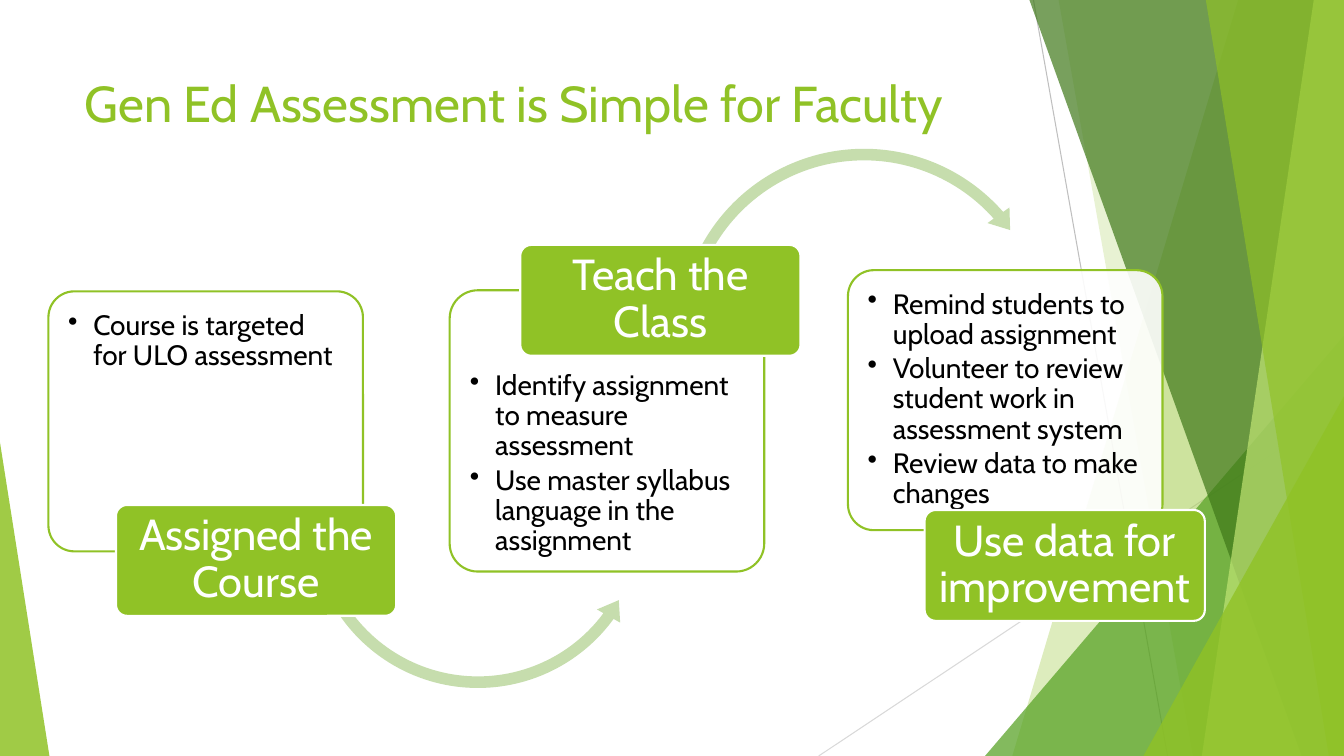
import dataclasses

import pptx
import pptx.dml.color
import pptx.enum.shapes
import pptx.enum.text
import pptx.oxml.ns
import pptx.oxml.xmlchemy
import pptx.util

EMU_PER_PX = 9144  # 100 px to the inch
SLIDE_WIDTH, SLIDE_HEIGHT = 1333, 750
PANEL_WIDTH = 312
LABEL_WIDTH, LABEL_HEIGHT = 278, 110
SHAPES = pptx.enum.shapes.MSO_SHAPE
ALIGN = pptx.enum.text.PP_ALIGN
ANCHOR = pptx.enum.text.MSO_ANCHOR


@dataclasses.dataclass(frozen=True)
class Theme:
    font: str = "Cabin"
    green: str = "90C226"
    mid_green: str = "54A021"
    dark_green: str = "3F7819"
    lime: str = "C0E474"
    arrow: str = "C6DDAD"
    white: str = "FFFFFF"
    black: str = "000000"
    dark_line: str = "BFBFBF"
    light_line: str = "D9D9D9"
    title_size: int = 36
    label_size: int = 31
    body_size: int = 20
    outline: float = 1.5
    hairline: float = 0.75


THEME = Theme()


@dataclasses.dataclass(frozen=True)
class Step:
    panel: tuple  # left, top, height
    label: tuple  # left, top
    heading: str
    points: tuple
    text_top: int = 12


STEPS = (
    Step((48, 289, 258), (115, 501), "Assigned the Course",
         ("Course is targeted for ULO assessment",)),
    Step((446, 288, 279), (516, 243), "Teach the Class",
         ("Identify assignment to measure assessment",
          "Use master syllabus language in the assignment"), text_top=72),
    Step((841, 268, 258), (917, 506), "Use data for improvement",
         ("Remind students to upload assignment",
          "Volunteer to review student work in assessment system",
          "Review data to make changes")),
)


def px(length):
    return pptx.util.Emu(length * EMU_PER_PX)


def rgb(color):
    return pptx.dml.color.RGBColor.from_string(color)


def new_element(tag):
    return pptx.oxml.xmlchemy.OxmlElement(tag)


def style_shape(shape, fill, opacity=100, line=None):
    shape.shadow.inherit = False
    shape.fill.solid()
    shape.fill.fore_color.rgb = rgb(fill)
    if opacity < 100:
        color = shape._element.spPr.find(".//" + pptx.oxml.ns.qn("a:srgbClr"))
        alpha = new_element("a:alpha")
        alpha.set("val", str(opacity * 1000))
        color.append(alpha)
    if line:
        shape.line.color.rgb = rgb(line)
        shape.line.width = pptx.util.Pt(THEME.outline)
    else:
        shape.line.fill.background()


def add_preset(slide, kind, bounds, adjustments, fill, **style):
    shape = slide.shapes.add_shape(kind, *map(px, bounds))
    for index, value in enumerate(adjustments):
        shape.adjustments[index] = value
    style_shape(shape, fill, **style)
    return shape


def add_facet(slide, top_x, bottom_x, fill, opacity):
    """Fill the area between a slanted edge and the right side of the slide."""
    builder = slide.shapes.build_freeform(top_x, 0, scale=EMU_PER_PX)
    builder.add_line_segments([(SLIDE_WIDTH, 0), (SLIDE_WIDTH, SLIDE_HEIGHT),
                               (bottom_x, SLIDE_HEIGHT)], close=True)
    style_shape(builder.convert_to_shape(), fill, opacity)


def add_hairline(slide, start, end, color):
    line = slide.shapes.add_connector(
        pptx.enum.shapes.MSO_CONNECTOR.STRAIGHT, *map(px, start + end))
    line.line.color.rgb = rgb(color)
    line.line.width = pptx.util.Pt(THEME.hairline)
    line._element.spPr.append(new_element("a:effectLst"))


def add_bullet(para):
    properties = para._p.get_or_add_pPr()
    properties.set("marL", str(px(25)))
    properties.set("indent", str(px(-25)))
    bullet = new_element("a:buChar")
    bullet.set("char", "•")
    properties.append(bullet)


def write_text(shape, paragraphs, *, size, color, align=ALIGN.LEFT,
               anchor=ANCHOR.TOP, insets=(10, 5, 10, 5), line_spacing=0.9,
               space_after=0, bullets=False):
    """Fill a shape with paragraphs; insets run left, top, right, bottom."""
    frame = shape.text_frame
    frame.word_wrap = True
    frame.auto_size = pptx.enum.text.MSO_AUTO_SIZE.NONE
    frame.vertical_anchor = anchor
    (frame.margin_left, frame.margin_top,
     frame.margin_right, frame.margin_bottom) = map(px, insets)
    for index, text in enumerate(paragraphs):
        para = frame.add_paragraph() if index else frame.paragraphs[0]
        para.alignment = align
        para.line_spacing = line_spacing
        para.space_before = pptx.util.Pt(0)
        para.space_after = pptx.util.Pt(space_after)
        if bullets:
            add_bullet(para)
        span = para.add_run()
        span.text = text
        span.font.name = THEME.font
        span.font.size = pptx.util.Pt(size)
        span.font.color.rgb = rgb(color)


def add_backdrop(slide):
    add_hairline(slide, (1025, 0), (1158, 750), THEME.dark_line)
    add_hairline(slide, (1333, 403), (812, 750), THEME.light_line)
    add_facet(slide, 1228, 1004, THEME.green, 30)
    add_facet(slide, 1050, 1183, THEME.green, 20)
    add_preset(slide, SHAPES.ISOSCELES_TRIANGLE, (977, 333, 356, 417), [1],
               THEME.mid_green, opacity=72)
    add_facet(slide, 1021, 1291, THEME.dark_green, 70)
    add_facet(slide, 1303, 1192, THEME.lime, 70)
    add_facet(slide, 1196, 1318, THEME.green, 65)
    add_preset(slide, SHAPES.ISOSCELES_TRIANGLE, (1134, 393, 199, 357), [1],
               THEME.green, opacity=80)
    add_preset(slide, SHAPES.ISOSCELES_TRIANGLE, (0, 439, 49, 311), [0],
               THEME.green, opacity=85)


def add_title(slide, text):
    title = slide.shapes.title
    title.left, title.top, title.width, title.height = map(
        px, (74, 67, 940, 144))
    write_text(title, [text], size=THEME.title_size, color=THEME.green,
               line_spacing=1.0)


def add_panel(slide, step):
    left, top, height = step.panel
    panel = add_preset(slide, SHAPES.ROUNDED_RECTANGLE,
                       (left, top, PANEL_WIDTH, height), [0.1],
                       THEME.white, opacity=90, line=THEME.green)
    write_text(panel, step.points, size=THEME.body_size, color=THEME.black,
               insets=(12, step.text_top, 12, 0), space_after=3, bullets=True)


def add_label(slide, step):
    label = add_preset(slide, SHAPES.ROUNDED_RECTANGLE,
                       (*step.label, LABEL_WIDTH, LABEL_HEIGHT), [0.1],
                       THEME.green, line=THEME.white)
    write_text(label, [step.heading], size=THEME.label_size,
               color=THEME.white, align=ALIGN.CENTER, anchor=ANCHOR.MIDDLE,
               insets=(6, 4, 6, 4))


def main():
    deck = pptx.Presentation()
    deck.slide_width, deck.slide_height = px(SLIDE_WIDTH), px(SLIDE_HEIGHT)
    slide = deck.slides.add_slide(deck.slide_layouts[5])
    add_backdrop(slide)
    add_title(slide, "Gen Ed Assessment is Simple for Faculty")
    arrows = (
        (SHAPES.LEFT_CIRCULAR_ARROW, (300, 342, 348, 348),
         (0.033, 4.01, 21.774, 90.254, 0.038)),
        (SHAPES.CIRCULAR_ARROW, (666, 140, 382, 382),
         (0.03, 3.622, 191.173, 122.306, 0.035)),
        None,
    )
    for step, arrow in zip(STEPS, arrows):
        add_panel(slide, step)
        if arrow:
            add_preset(slide, *arrow, THEME.arrow)
        add_label(slide, step)
    deck.save("out.pptx")


if __name__ == "__main__":
    main()
